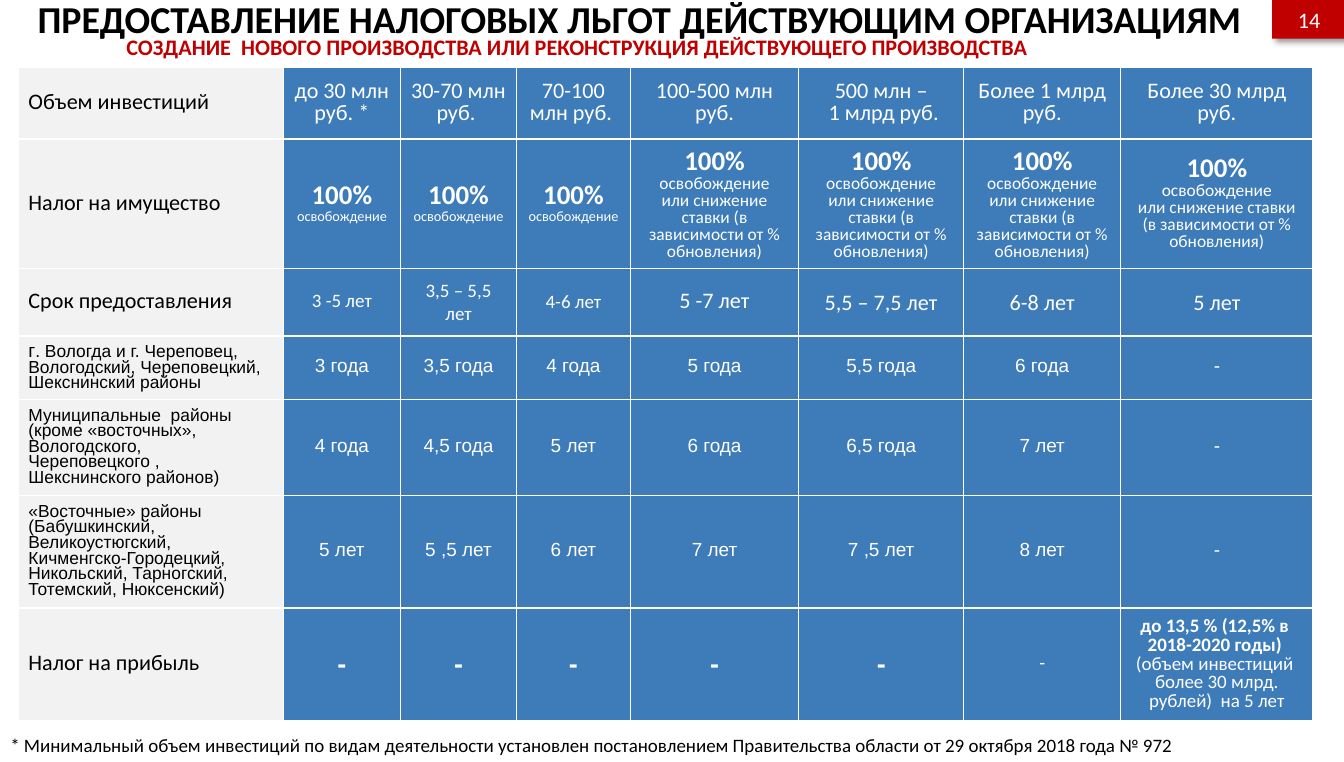
import pptx
import pptx.util
import pptx.dml.color
import pptx.enum.shapes
import pptx.enum.text
import pptx.oxml
from dataclasses import dataclass

Inches, Pt = pptx.util.Inches, pptx.util.Pt
ALIGN, ANCHOR = pptx.enum.text.PP_ALIGN, pptx.enum.text.MSO_ANCHOR


@dataclass(frozen=True)
class Theme:
    sans: str = "Calibri"
    plain: str = "Arial"
    black: str = "000000"
    white: str = "FFFFFF"
    red: str = "C00000"
    blue: str = "3D7BB9"
    grey: str = "F2F2F2"
    title: int = 24
    rate: int = 17
    large: int = 14
    body: int = 12
    small: int = 11
    tiny: int = 9
    tight: float = 0.8


THEME = Theme()


# Content: a cell is (paragraphs, line spacing), a paragraph is a list of (text, size, bold)
def line(text, size=THEME.large, bold=False):
    return [(text, size, bold)]


def cell(*paragraphs, spacing=THEME.tight):
    return paragraphs, spacing


def cells(texts, size=THEME.large, bold=False, spacing=THEME.tight):
    return [cell(line(text, size, bold), spacing=spacing) for text in texts]


TITLE = "ПРЕДОСТАВЛЕНИЕ НАЛОГОВЫХ ЛЬГОТ ДЕЙСТВУЮЩИМ ОРГАНИЗАЦИЯМ"
SUBTITLE = "СОЗДАНИЕ  НОВОГО ПРОИЗВОДСТВА ИЛИ РЕКОНСТРУКЦИЯ ДЕЙСТВУЮЩЕГО ПРОИЗВОДСТВА"
FOOTNOTE = ("* Минимальный объем инвестиций по видам деятельности установлен "
            "постановлением Правительства области от 29 октября 2018 года № 972")
PAGE = "14"

EXEMPT = cell([("100%", THEME.rate, True), (" ", THEME.body, False),
               ("освобождение", THEME.tiny, False)])
EXEMPT_OR_REDUCED = cell(
    [("100% ", THEME.rate, True), ("освобождение", THEME.small, False)],
    line("или снижение ставки (в зависимости от % обновления)", THEME.small))
PROFIT_RATE = cell([
    ("до 13,5 % (12,5% в  2018-2020 годы) ", THEME.body, True),
    (" (объем инвестиций  более 30 млрд. рублей)  на 5 лет", THEME.body, False)])

# Rows: height, vertical margin, label font, value font, label, values
ROWS = [
    (0.63, 0.09, THEME.sans, THEME.sans, cell(line("Объем инвестиций")),
     cells(["до 30 млн руб. *", "30-70 млн руб. ", "70-100 млн руб. ", "100-500 млн руб."])
     + [cell(line("500 млн –"), line(" 1 млрд руб."))]
     + cells(["Более 1 млрд руб.", "Более 30 млрд руб."])),
    (1.14, 0.09, THEME.sans, THEME.sans, cell(line("Налог на имущество")),
     [EXEMPT] * 3 + [EXEMPT_OR_REDUCED] * 4),
    (0.59, 0.09, THEME.sans, THEME.sans, cell(line("Срок предоставления")),
     cells(["3 -5 лет"], THEME.body)
     + cells(["3,5 – 5,5 лет", "4-6 лет"], THEME.body, spacing=1.0)
     + cells(["5 -7 лет"])
     + cells(["5,5 – 7,5 лет", "6-8 лет", "5 лет"], spacing=1.0)),
    (0.56, 0.05, THEME.plain, THEME.plain,
     cell([("г", THEME.body, False),
           (". Вологда и г. Череповец, Вологодский, Череповецкий, Шекснинский районы",
            THEME.small, False)]),
     cells(["3 года", "3,5 года", "4 года", "5 года", "5,5 года", "6 года", "-"], THEME.body)),
    (0.84, 0.05, THEME.plain, THEME.plain,
     cell(line("Муниципальные  районы (кроме «восточных», Вологодского,  "
               "Череповецкого , Шекснинского районов)", THEME.small)),
     cells(["4 года", "4,5 года", "5 лет", "6 года", "6,5 года", "7 лет", "-"], THEME.body)),
    (0.99, 0.05, THEME.plain, THEME.plain,
     cell(line("«Восточные» районы (Бабушкинский, Великоустюгский, Кичменгско-Городецкий, "
               "Никольский, Тарногский, Тотемский, Нюксенский)", THEME.small)),
     cells(["5 лет", "5 ,5 лет", "6 лет", "7 лет", "7 ,5 лет", "8 лет", "-"], THEME.body)),
    (0.99, 0.09, THEME.sans, THEME.plain, cell(line("Налог на прибыль")),
     cells(["-"] * 5, THEME.rate, True, spacing=1.0)
     + cells(["-"], THEME.body) + [PROFIT_RATE]),
]
COLUMNS = [2.33, 1.03, 1.02, 1, 1.48, 1.45, 1.38, 1.69]
LABEL_FONT_FROM = 6  # the last two columns share the font of the row label


# Helpers
def rgb(value):
    return pptx.dml.color.RGBColor.from_string(value)


def set_font(font, size, bold, face, color):
    font.size, font.bold, font.name = Pt(size), bold, face
    font.color.rgb = rgb(color)


def write(frame, paragraphs, face, color, align=ALIGN.LEFT, spacing=1.0):
    for index, runs in enumerate(paragraphs):
        paragraph = frame.add_paragraph() if index else frame.paragraphs[0]
        paragraph.alignment, paragraph.line_spacing = align, spacing
        for text, size, bold in runs:
            run = paragraph.add_run()
            run.text = text
            if len(runs) > 1:
                set_font(run.font, size, bold, face, color)
        if len(runs) == 1:
            set_font(paragraph.font, size, bold, face, color)


def add_text(slide, box, paragraph, color, align=ALIGN.LEFT, spacing=1.0):
    frame = slide.shapes.add_textbox(*map(Inches, box)).text_frame
    frame.word_wrap = True
    frame.margin_left = frame.margin_right = Inches(0.09)
    frame.margin_top = frame.margin_bottom = Inches(0.04)
    write(frame, [paragraph], THEME.sans, color, align, spacing)


def add_borders(table_cell):
    properties = table_cell._tc.get_or_add_tcPr()
    for position, side in enumerate(("lnL", "lnR", "lnT", "lnB")):
        properties.insert(position, pptx.oxml.parse_xml(
            f'<a:{side} xmlns:a="http://schemas.openxmlformats.org/drawingml/2006/main" '
            f'w="{Pt(1)}"><a:solidFill><a:srgbClr val="{THEME.white}"/></a:solidFill></a:{side}>'))


def add_benefits(slide):
    heights = [row[0] for row in ROWS]
    table = slide.shapes.add_table(
        len(ROWS), len(COLUMNS), Inches(0.16), Inches(0.59),
        Inches(sum(COLUMNS)), Inches(sum(heights))).table
    table.first_row = table.horz_banding = False
    for column, width in zip(table.columns, COLUMNS):
        column.width = Inches(width)
    for r, (height, margin, label_face, value_face, label, values) in enumerate(ROWS):
        table.rows[r].height = Inches(height)
        for c, (paragraphs, spacing) in enumerate([label] + values):
            is_label = c == 0
            like_label = is_label or c >= LABEL_FONT_FROM
            target = table.cell(r, c)
            target.vertical_anchor = ANCHOR.MIDDLE
            target.margin_left = target.margin_right = Inches(0.09)
            target.margin_top = target.margin_bottom = Inches(margin)
            target.fill.solid()
            target.fill.fore_color.rgb = rgb(THEME.grey if is_label else THEME.blue)
            add_borders(target)
            write(target.text_frame, paragraphs, label_face if like_label else value_face,
                  THEME.black if is_label else THEME.white,
                  ALIGN.LEFT if is_label else ALIGN.CENTER, spacing)


def add_page_number(slide):
    badge = slide.shapes.add_shape(pptx.enum.shapes.MSO_SHAPE.RECTANGLE,
                                   *map(Inches, (11.18, 0, 0.65, 0.34)))
    badge.fill.solid()
    badge.fill.fore_color.rgb = rgb(THEME.red)
    badge.line.fill.background()
    badge._element.spPr.append(pptx.oxml.parse_xml(
        '<a:effectLst xmlns:a="http://schemas.openxmlformats.org/drawingml/2006/main">'
        f'<a:outerShdw blurRad="{Pt(4)}" dist="{Pt(3)}" dir="2700000" rotWithShape="0">'
        f'<a:srgbClr val="{THEME.black}"><a:alpha val="40000"/></a:srgbClr>'
        '</a:outerShdw></a:effectLst>'))
    badge.text_frame.vertical_anchor = ANCHOR.MIDDLE
    write(badge.text_frame, [line(PAGE)], THEME.sans, THEME.white, ALIGN.CENTER)


def main():
    deck = pptx.Presentation()
    # The page is 30 by 17 centimetres
    deck.slide_width = Inches(30 / 2.54)
    deck.slide_height = Inches(17 / 2.54)
    slide = deck.slides.add_slide(deck.slide_layouts[6])

    # Headings
    add_text(slide, (0.24, 0, 12.05, 0.42), line(TITLE, THEME.title, True),
             THEME.black, spacing=THEME.tight)
    add_text(slide, (1.02, 0.28, 11.3, 0.3), line(SUBTITLE, THEME.large, True),
             THEME.red, ALIGN.JUSTIFY, 0.9)
    # Table of benefits, footnote and page number
    add_benefits(slide)
    add_text(slide, (0, 6.4, 11.42, 0.29), line(FOOTNOTE, THEME.body), THEME.black)
    add_page_number(slide)

    deck.save("out.pptx")


if __name__ == "__main__":
    main()
